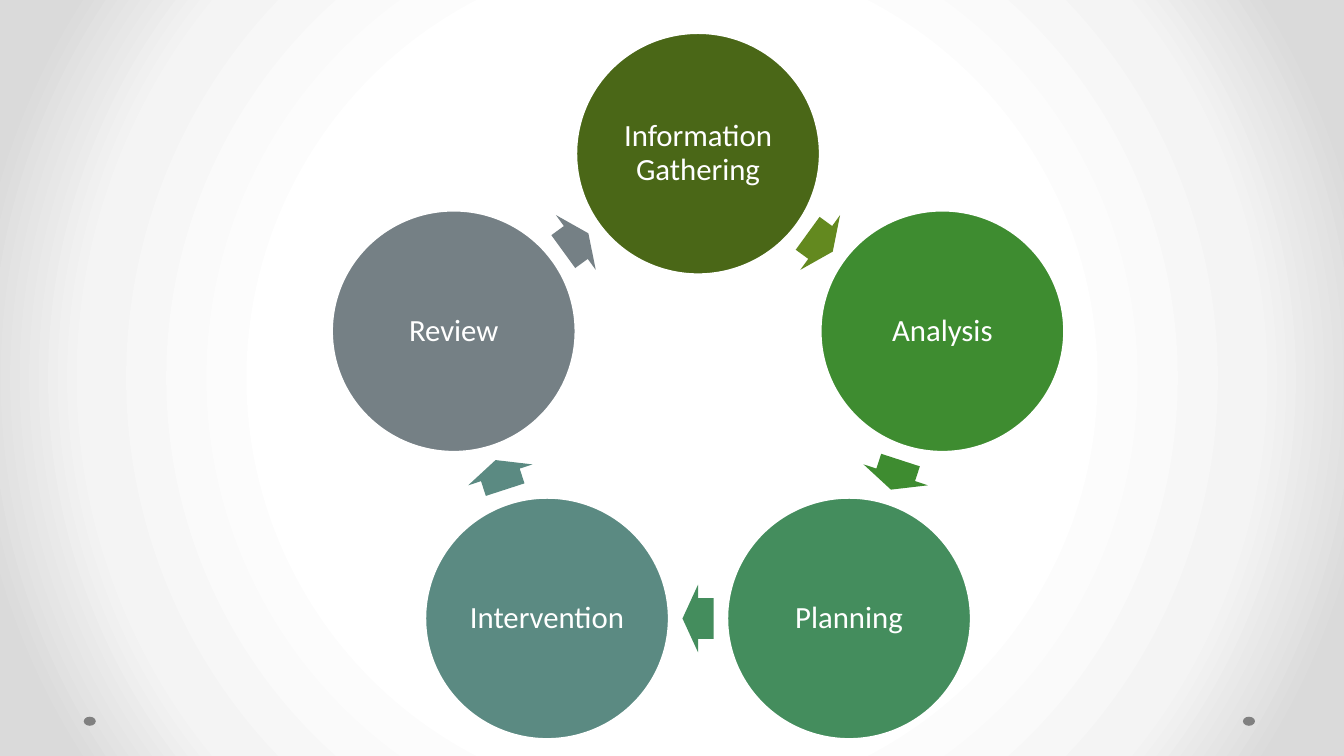
"""Five-step care cycle drawn as a ring of circles and arrows."""
from math import cos, radians, sin

from pptx import Presentation
from pptx.dml.color import RGBColor
from pptx.enum.shapes import MSO_SHAPE
from pptx.enum.text import MSO_ANCHOR, PP_ALIGN
from pptx.oxml import parse_xml
from pptx.oxml.ns import nsdecls, qn
from pptx.util import Pt

OVAL, ARROW = MSO_SHAPE.OVAL, MSO_SHAPE.RIGHT_ARROW
MIDDLE, CENTER = MSO_ANCHOR.MIDDLE, PP_ALIGN.CENTER

COLORS = {
    "white": "FFFFFF", "pale": "F4F4F4", "edge": "DADADA", "dot": "808080",
    "olive": "4A6717", "moss": "63891F", "green": "3E8C30",
    "jade": "448D5D", "teal": "5B8A82", "slate": "758085",
}
STEPS = [
    ("Information Gathering", "olive", "moss"),
    ("Analysis", "green", "green"),
    ("Planning", "jade", "jade"),
    ("Intervention", "teal", "teal"),
    ("Review", "slate", "slate"),
]
STOPS = [(50, "white"), (76, "pale"), (92, "edge")]
FRAME = {"word_wrap": True, "vertical_anchor": MIDDLE,
         "margin_left": Pt(2.2), "margin_right": Pt(2.2),
         "margin_top": Pt(2.2), "margin_bottom": Pt(2.2)}
PARA = {"alignment": CENTER, "line_spacing": 0.9}
FONT = {"name": "Calibri", "size": Pt(22)}
MID_X, MID_Y, RADIUS = 498.6, 293.3, 183.5
TURN = 360 / len(STEPS)

deck = Presentation()
deck.slide_width, deck.slide_height = Pt(960), Pt(540)
slide = deck.slides.add_slide(deck.slide_layouts[6])

slide.background.fill.gradient()
grad = slide.element.find(".//" + qn("a:gradFill"))
stops = "".join(
    f'<a:gs pos="{pos * 1000}"><a:srgbClr val="{COLORS[tone]}"/></a:gs>'
    for pos, tone in STOPS)
grad.getparent().replace(grad, parse_xml(
    f'<a:gradFill {nsdecls("a")} rotWithShape="1"><a:gsLst>{stops}</a:gsLst>'
    '<a:path path="circle"><a:fillToRect l="50000" t="50000" r="50000" '
    'b="50000"/></a:path></a:gradFill>'))


def place(kind, x, y, width, height, tone):
    """Add a plain filled shape centred on x, y."""
    shape = slide.shapes.add_shape(
        kind, Pt(x - width / 2), Pt(y - height / 2), Pt(width), Pt(height))
    shape.shadow.inherit = False
    shape.fill.solid()
    shape.fill.fore_color.rgb = RGBColor.from_string(COLORS[tone])
    shape.line.fill.background()
    return shape


def spot(step):
    """Return the centre of a step on the ring."""
    angle = radians(step * TURN)
    return MID_X + RADIUS * sin(angle), MID_Y - RADIUS * cos(angle)


for x in (892.1, 64.1):
    place(OVAL, x, 515.2, 8.6, 6.5, "dot")

white = RGBColor.from_string(COLORS["white"])
for step, (label, tone, tip) in enumerate(STEPS):
    x, y = spot(step)
    disc = place(OVAL, x, y, 174.8, 173.2, tone)
    disc.line.color.rgb = white
    disc.line.width = Pt(2.25)
    frame = disc.text_frame
    frame.text = label
    para = frame.paragraphs[0]
    for part, values in ((frame, FRAME), (para, PARA), (para.font, FONT)):
        for key, value in values.items():
            setattr(part, key, value)
    para.font.color.rgb = white

    next_x, next_y = spot(step + 1)
    arrow = place(ARROW, (x + next_x) / 2, (y + next_y) / 2, 22.2, 48.4, tip)
    arrow.rotation = (step + 0.5) * TURN
    arrow.adjustments[0], arrow.adjustments[1] = 0.6, 0.5

deck.save("out.pptx")
